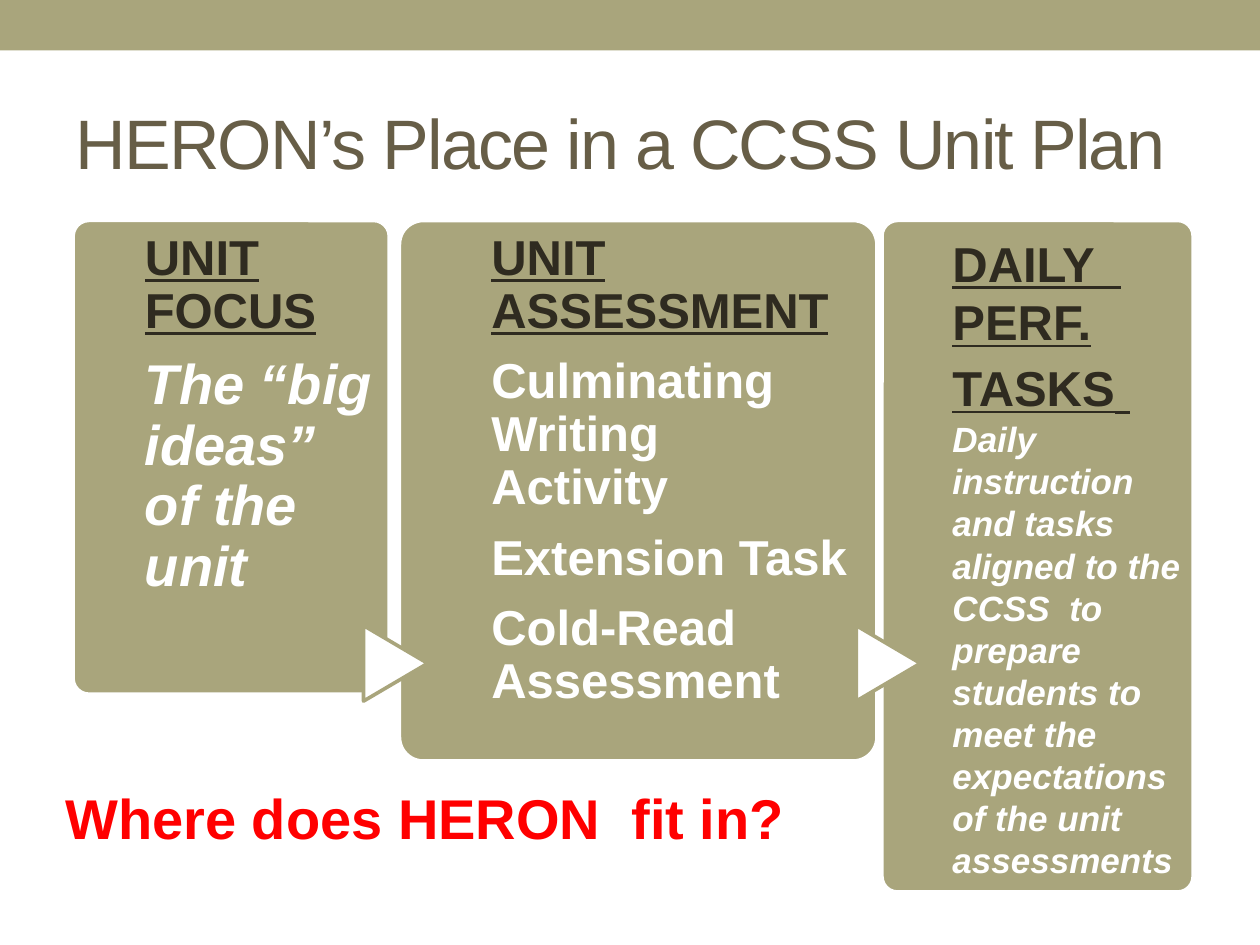
from pptx import Presentation
from pptx import util as u
from pptx.dml.color import RGBColor
from pptx.enum import shapes, text

COLS, ROWS = 100, 75
HUE = {"sage": "A9A57C", "olive": "675E47", "dark": "2F2B20",
       "white": "FFFFFF", "red": "FF0000"}
HEAD = {"size": 28, "hue": "dark", "bold": True, "line": True}
BODY = {"size": 28, "hue": "white", "bold": True}
BREAK = ("\n", {})

deck = Presentation()
deck.slide_width, deck.slide_height = u.Inches(10), u.Inches(7.5)
CELL_W, CELL_H = deck.slide_width / COLS, deck.slide_height / ROWS


def place(box):
    """Turn a box in grid cells into slide lengths."""
    x, y, w, h = box
    return [round(n) for n in (x * CELL_W, y * CELL_H, w * CELL_W, h * CELL_H)]


def shade(hue):
    return RGBColor.from_string(HUE[hue])


def draw(page, kind, box, fill, edge=None):
    part = page.shapes.add_shape(kind, *place(box))
    part.shadow.inherit = False
    part.fill.solid()
    part.fill.fore_color.rgb = shade(fill)
    if edge:
        part.line.color.rgb = shade(edge)
        part.line.width = u.Pt(2.08)
    else:
        part.line.fill.background()
    return part


def add_run(para, words, size, hue, bold=False, slant=False, line=False):
    run = para.add_run()
    run.text = words
    font = run.font
    font.name, font.size = "Arial", u.Pt(size)
    font.bold, font.italic, font.underline = bold, slant, line
    font.color.rgb = shade(hue)


def write(page, box, paras, lead=None, gap=0):
    """Add a text box; each paragraph is a list of (words, style) runs."""
    frame = page.shapes.add_textbox(*place(box)).text_frame
    frame.word_wrap = True
    for i, runs in enumerate(paras):
        para = frame.add_paragraph() if i else frame.paragraphs[0]
        para.space_after = u.Pt(gap)
        if lead:
            para.line_spacing = lead
        for run in runs:
            if run == BREAK:
                para.add_line_break()
            else:
                add_run(para, run[0], **run[1])
    return frame


def header(page, box):
    draw(page, shapes.MSO_SHAPE.RECTANGLE, (0, 0, COLS, 4), "sage")
    frame = write(page, box, [[("HERON’s Place in a CCSS Unit Plan",
                                {"size": 40, "hue": "olive"})]])
    frame.vertical_anchor = text.MSO_ANCHOR.MIDDLE
    frame.paragraphs[0].runs[0].font._element.set("spc", "-100")


def panel(page, box, inset, paras, arrow=None, lead=None, gap=0):
    """Draw one stage, the arrow leading into it and its text."""
    x, y, w, h = box
    card = draw(page, shapes.MSO_SHAPE.ROUNDED_RECTANGLE, box, "sage", "white")
    card.adjustments[0] = 0.05
    if arrow is not None:
        tip = draw(page, shapes.MSO_SHAPE.FLOWCHART_EXTRACT,
                   (x - arrow, y + 32.6, 6, 5.1), "white", "sage")
        tip.rotation = 90
    frame = write(page, (x + inset, y, w - inset - 0.7, h), paras, lead, gap)
    frame.margin_left = frame.margin_right = frame.margin_bottom = 0
    frame.margin_top = u.Inches(0.1)


def stages(page, top):
    panel(page, (5.8, top, 25.1, 37.6), 5.7,
          [[("UNIT FOCUS", HEAD)],
           [("The “big ideas” of the unit", BODY | {"size": 32, "slant": True})]],
          lead=0.9, gap=10)
    panel(page, (31.7, top, 37.9, 42.9), 7.3,
          [[("UNIT ASSESSMENT", HEAD)],
           [("Culminating Writing", BODY), BREAK, ("Activity", BODY)],
           [("Extension Task", BODY)],
           [("Cold-Read Assessment", BODY)]],
          arrow=3.3, lead=0.9, gap=10)
    daily = ("Daily instruction and tasks aligned to the CCSS  to prepare "
             "students to meet the expectations of the unit assessments")
    panel(page, (70, top, 24.7, 53.3), 5.6,
          [[("DAILY  ", HEAD)], [("PERF.", HEAD)],
           [("TASKS", HEAD), (" ", HEAD | {"size": 32})],
           [(daily, BODY | {"size": 20, "slant": True})]],
          arrow=2.5)


def footer(page, box):
    write(page, box, [[("Where does HERON  fit in?",
                        {"size": 32, "hue": "red", "bold": True})]])


def main():
    page = deck.slides.add_slide(deck.slide_layouts[6])
    header(page, (5, 5.8, 90, 10.8))
    stages(page, 17.5)
    footer(page, (4.2, 61.7, 60.8, 6.4))
    deck.save("out.pptx")


if __name__ == "__main__":
    main()
